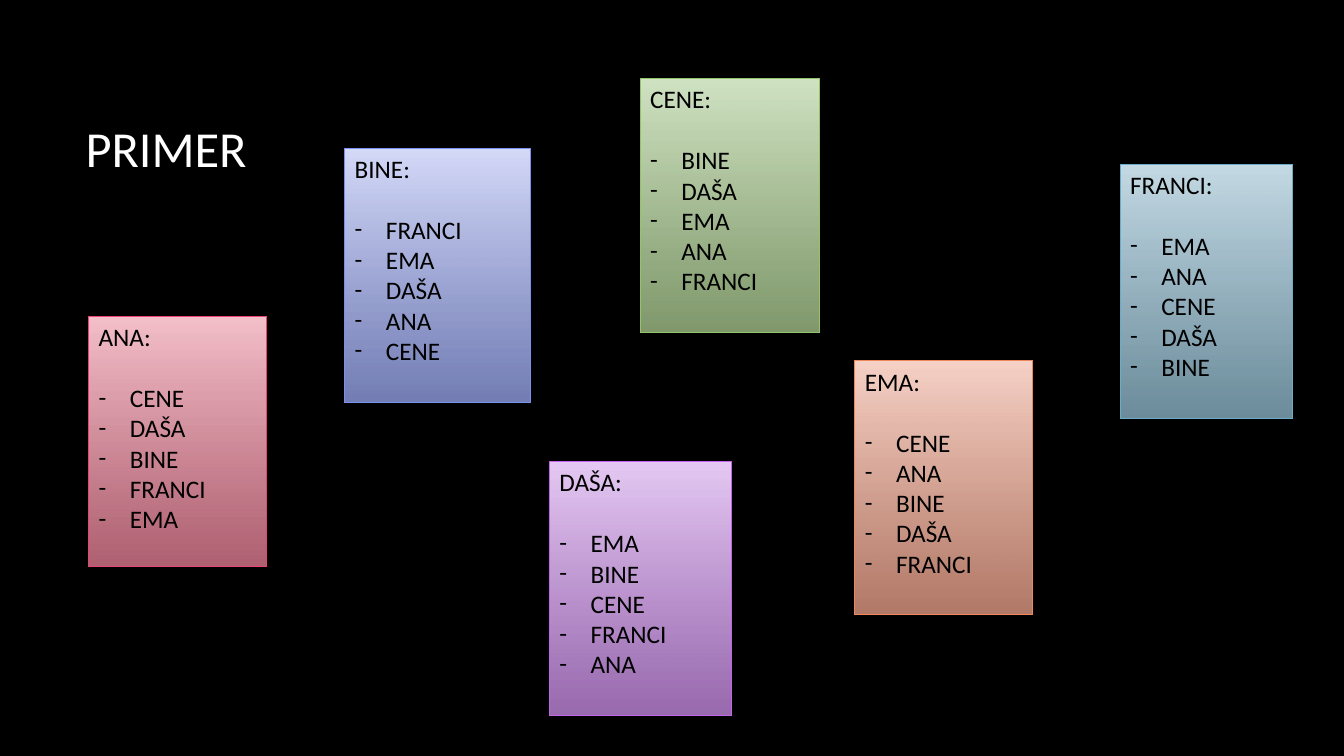
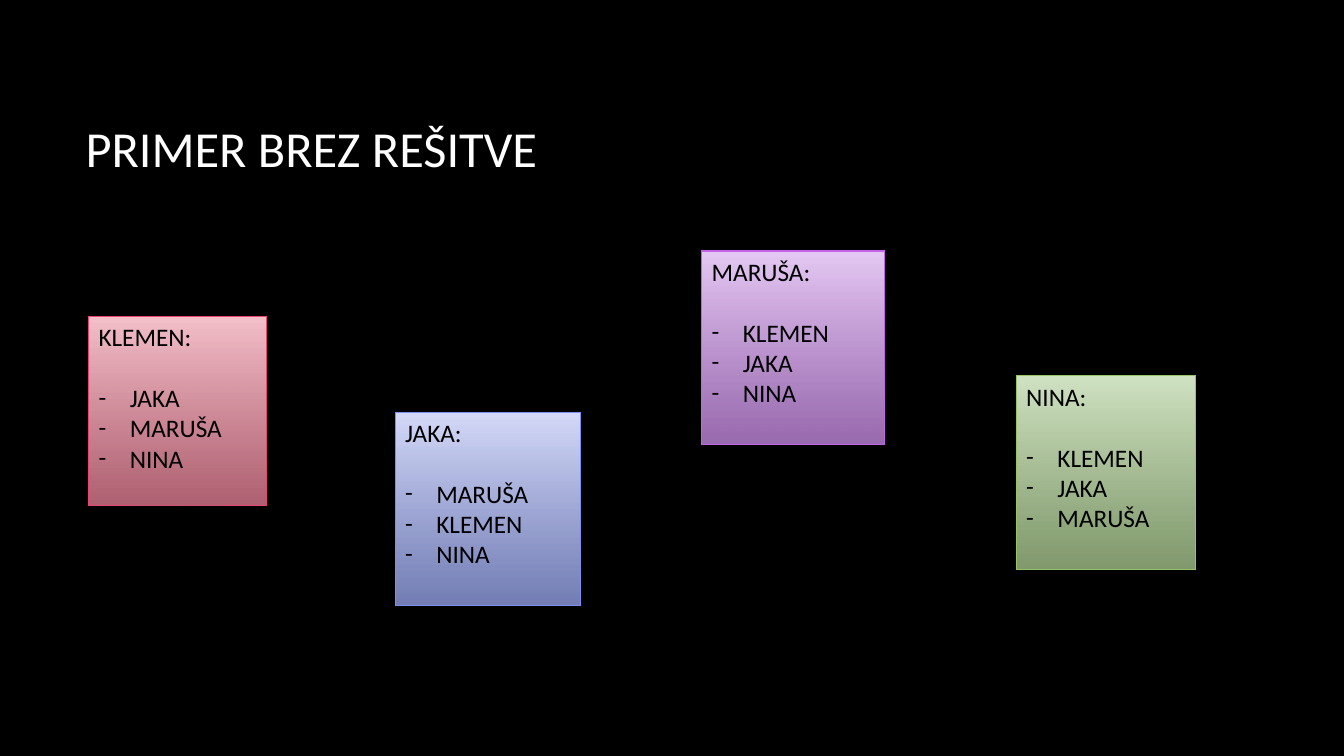
from typing import NamedTuple

from lxml import etree
from pptx import Presentation
from pptx.dml.color import RGBColor
from pptx.enum.shapes import MSO_SHAPE
from pptx.enum.text import MSO_ANCHOR, PP_ALIGN
from pptx.oxml.ns import qn
from pptx.util import Inches, Pt

RECTANGLE = MSO_SHAPE.RECTANGLE
TOP, MIDDLE = MSO_ANCHOR.TOP, MSO_ANCHOR.MIDDLE
LEFT = PP_ALIGN.LEFT

FONT = "Calibri"
BLACK, WHITE = "000000", "FFFFFF"
BLANK_LAYOUT = 6
LINE_HEIGHT = 0.3
INDENT = Inches(0.31)


class CardStyle(NamedTuple):
    light: str
    deep: str
    outline: str
    width: float
    padding: float = 1.02


PINK = CardStyle("F5C1CB", "EC849A", "E84574", 1.76, 0.98)
BLUE = CardStyle("D6DBFA", "9DABF4", "798FF2", 1.84)
VIOLET = CardStyle("E7CAF5", "CF91EC", "C363E8", 1.81)
GREEN = CardStyle("D1E4C4", "AFCF94", "95C369", 1.78)
ORANGE = CardStyle("F8D3C8", "F1A58D", "EE875A", 1.76)
TEAL = CardStyle("C5DBE6", "95BFD3", "6AADC8", 1.71)

# Each card: style, left, top, person, preferences in order
SLIDES = [
    ("PRIMER", [
        (PINK, 0.88, 3.14, "ANA", "CENE DAŠA BINE FRANCI EMA"),
        (BLUE, 3.42, 1.47, "BINE", "FRANCI EMA DAŠA ANA CENE"),
        (VIOLET, 5.45, 4.58, "DAŠA", "EMA BINE CENE FRANCI ANA"),
        (GREEN, 6.35, 0.78, "CENE", "BINE DAŠA EMA ANA FRANCI"),
        (ORANGE, 8.48, 3.58, "EMA", "CENE ANA BINE DAŠA FRANCI"),
        (TEAL, 11.11, 1.63, "FRANCI", "EMA ANA CENE DAŠA BINE"),
    ]),
    ("PRIMER BREZ REŠITVE", [
        (PINK, 0.88, 3.14, "KLEMEN", "JAKA MARUŠA NINA"),
        (BLUE, 3.92, 4.09, "JAKA", "MARUŠA KLEMEN NINA"),
        (VIOLET, 6.96, 2.49, "MARUŠA", "KLEMEN JAKA NINA"),
        (GREEN, 10.08, 3.73, "NINA", "KLEMEN JAKA MARUŠA"),
    ]),
]


def rgb(value):
    return RGBColor.from_string(value)


def format_text(para, size, color):
    para.alignment = LEFT
    for span in para.runs:
        span.font.name = FONT
        span.font.size = Pt(size)
        span.font.color.rgb = rgb(color)


def add_dash(para):
    """Give the paragraph a hanging dash bullet."""
    properties = para._p.get_or_add_pPr()
    properties.set("marL", str(INDENT))
    properties.set("indent", str(-INDENT))
    etree.SubElement(properties, qn("a:buFont"), typeface=FONT)
    etree.SubElement(properties, qn("a:buChar"), char="-")


def fill_gradient(shape, light, deep):
    """Fade downwards from light to a partly transparent deep colour."""
    shape.fill.gradient()
    shape.fill.gradient_angle = 270
    for stop, color in zip(shape.fill.gradient_stops, (light, deep)):
        stop.color.rgb = rgb(color)
    colors = list(shape.element.spPr.find(qn("a:gradFill")).iter(qn("a:srgbClr")))
    etree.SubElement(colors[-1], qn("a:alpha"), val="74000")


def add_title(page, text):
    box = page.shapes.add_textbox(Inches(0.75), Inches(0.67), Inches(11.08), Inches(1.59))
    frame = box.text_frame
    frame.word_wrap = True
    frame.vertical_anchor = MIDDLE
    frame.text = text
    format_text(frame.paragraphs[0], 36, WHITE)


def add_card(page, style, left, top, person, preferences):
    names = preferences.split()
    height = style.padding + LINE_HEIGHT * len(names)
    card = page.shapes.add_shape(
        RECTANGLE, Inches(left), Inches(top), Inches(style.width), Inches(height))
    card.shadow.inherit = False
    fill_gradient(card, style.light, style.deep)
    card.line.color.rgb = rgb(style.outline)
    card.line.width = Pt(0.75)

    frame = card.text_frame
    frame.word_wrap = True
    frame.vertical_anchor = TOP
    frame.text = f"{person}:"
    heading = frame.paragraphs[0]
    heading.space_after = Pt(22)
    format_text(heading, 18, BLACK)
    for name in names:
        para = frame.add_paragraph()
        para.text = name
        add_dash(para)
        format_text(para, 18, BLACK)


def main():
    deck = Presentation()
    deck.slide_width, deck.slide_height = Inches(13.33), Inches(7.5)
    background = deck.slide_master.background.fill
    background.solid()
    background.fore_color.rgb = rgb(BLACK)
    for title, cards in SLIDES:
        page = deck.slides.add_slide(deck.slide_layouts[BLANK_LAYOUT])
        add_title(page, title)
        for card in cards:
            add_card(page, *card)
    deck.save("out.pptx")


if __name__ == "__main__":
    main()
